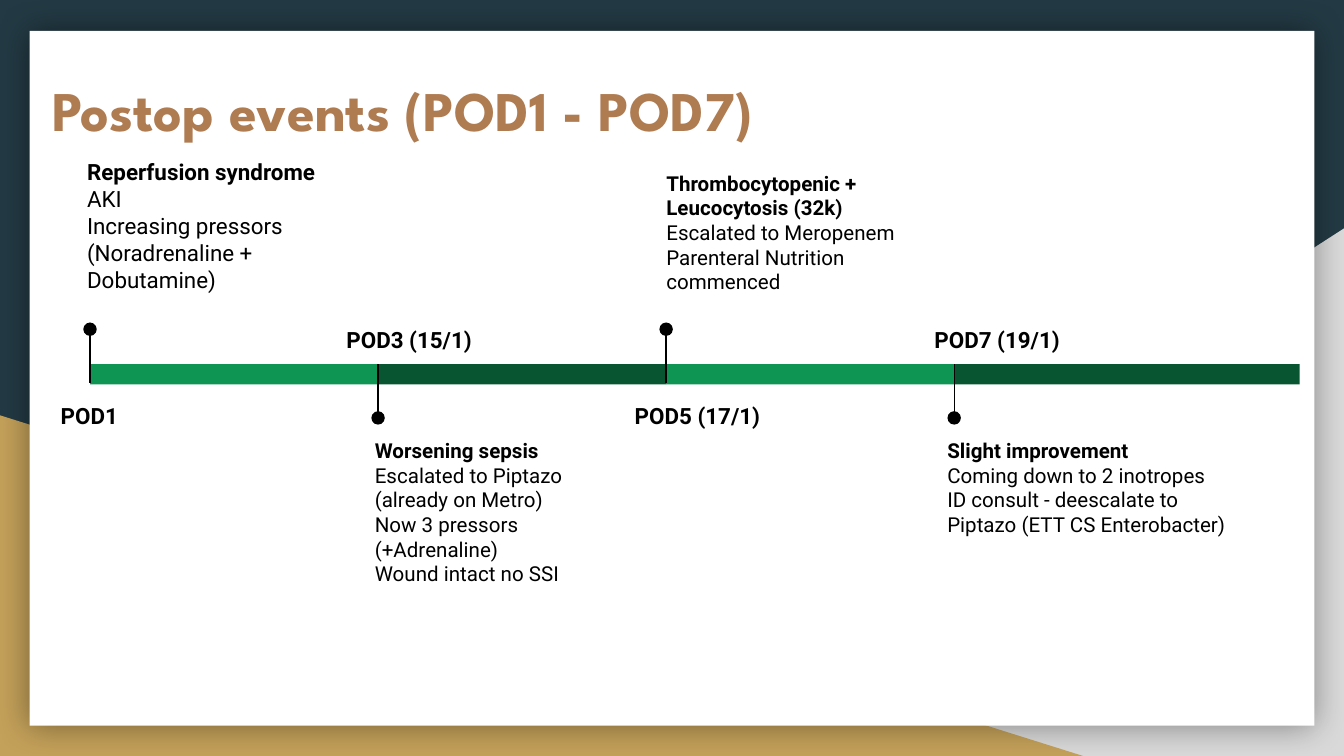
from copy import deepcopy

from lxml import etree
from pptx import Presentation
from pptx.dml.color import RGBColor
from pptx.enum.shapes import MSO_CONNECTOR, MSO_SHAPE
from pptx.enum.text import MSO_ANCHOR, PP_ALIGN
from pptx.oxml.ns import qn
from pptx.util import Inches, Pt

RECT, OVAL, WEDGE = MSO_SHAPE.RECTANGLE, MSO_SHAPE.OVAL, MSO_SHAPE.RIGHT_TRIANGLE
LINE = MSO_CONNECTOR.STRAIGHT
TOP = MSO_ANCHOR.TOP
LEFT, CENTER = PP_ALIGN.LEFT, PP_ALIGN.CENTER

NAVY = RGBColor(0x23, 0x3A, 0x44)
GREY = RGBColor(0xD9, 0xD9, 0xD9)
GOLD = RGBColor(0xC4, 0xA1, 0x5A)
WHITE = RGBColor(0xFF, 0xFF, 0xFF)
BLACK = RGBColor(0, 0, 0)
BROWN = RGBColor(0xAF, 0x7B, 0x51)
GREEN = RGBColor(0x0E, 0x94, 0x53)
DARK = RGBColor(0x08, 0x56, 0x31)

WIDE = 10
HIGH = WIDE * 9 / 16
START, LAST, END = 0.67, 7.1, 9.67
BAR_TOP, BAR_H = 2.71, 0.15
DOT = 0.1

# label, label box (left, width), note box (left, top, width), note size, head, note
EVENTS = [
    ("POD1", (0.19, 0.95), (0.55, 1.08, 2.14), 12, "Reperfusion syndrome",
     "AKI\nIncreasing pressors (Noradrenaline + Dobutamine)"),
    ("POD3 (15/1)", (2.41, 1.27), (2.69, 3.16, 2.08), 11, "Worsening sepsis",
     "Escalated to Piptazo (already on Metro)\n"
     "Now 3 pressors (+Adrenaline)\nWound intact no SSI"),
    ("POD5 (17/1)", (4.6, 1.18), (4.86, 1.17, 2.14), 11,
     "Thrombocytopenic + Leucocytosis (32k)",
     "Escalated to Meropenem\nParenteral Nutrition commenced"),
    ("POD7 (19/1)", (6.69, 1.46), (6.95, 3.16, 2.46), 11, "Slight improvement",
     "Coming down to 2 inotropes\n"
     "ID consult - deescalate to Piptazo (ETT CS Enterobacter)"),
]


class Deck:
    def __init__(self):
        self.prs = Presentation()
        self.prs.slide_width, self.prs.slide_height = Inches(WIDE), Inches(HIGH)
        self.slide = self.prs.slides.add_slide(self.prs.slide_layouts[6])
        fill = self.slide.background.fill
        fill.solid()
        fill.fore_color.rgb = NAVY

    def shape(self, kind, x, y, w, h, color):
        item = self.slide.shapes.add_shape(kind, *map(Inches, (x, y, w, h)))
        item.shadow.inherit = False
        item.fill.solid()
        item.fill.fore_color.rgb = color
        item.line.fill.background()
        return item

    def glow(self, item, blur, alpha):
        """Give the shape an even dark shadow on all sides."""
        effects = item._element.spPr.find(qn("a:effectLst"))
        shade = etree.SubElement(effects, qn("a:outerShdw"),
                                 blurRad=str(Pt(blur)), dist="0", algn="ctr", rotWithShape="0")
        color = etree.SubElement(shade, qn("a:srgbClr"), val=str(BLACK))
        etree.SubElement(color, qn("a:alpha"), val=str(alpha * 1000))

    def line(self, x, top, end):
        item = self.slide.shapes.add_connector(LINE, *map(Inches, (x, top, x, end)))
        item.line.color.rgb = BLACK
        item.line.width = Pt(0.75)
        etree.SubElement(item._element.spPr, qn("a:effectLst"))

    def text(self, parts, x, y, w, h, size=12, font="Roboto", color=BLACK,
             align=LEFT, space=None, after=None):
        """Write one paragraph per part, the first in bold; newlines break lines."""
        frame = self.slide.shapes.add_textbox(*map(Inches, (x, y, w, h))).text_frame
        frame.word_wrap = True
        frame.vertical_anchor = TOP
        frame.margin_left = frame.margin_right = Inches(0.1)
        frame.margin_top = frame.margin_bottom = Inches(0.1)
        for i, part in enumerate(parts):
            para = frame.add_paragraph() if i else frame.paragraphs[0]
            para.alignment, para.line_spacing = align, space
            if part == parts[-1]:
                para.space_after = after
            para.text = part.replace("\n", "\v")
            for run in para.runs:
                run.font.size, run.font.name = Pt(size), font
                run.font.bold = i == 0
                run.font.color.rgb = color
            for gap in para._p.findall(qn("a:br")):
                gap.append(deepcopy(para.runs[0]._r.rPr))

    def event(self, i, label, place, note, size, head, body):
        """Draw one stretch of the bar; notes go above and below in turn."""
        above = i % 2 == 0
        step = (LAST - START) / (len(EVENTS) - 1)
        x = START + i * step
        width = END - LAST if i == len(EVENTS) - 1 else step
        self.shape(RECT, x, BAR_TOP, width, BAR_H, GREEN if above else DARK)
        top, end, dot = (2.46, 2.85, 2.4) if above else (BAR_TOP, 3.1, 3.06)
        self.line(x, top, end)
        self.shape(OVAL, x - DOT / 2, dot, DOT, DOT, BLACK)
        left, wide = place
        self.text([label], left, 2.86 if above else 2.3, wide, 0.41,
                  align=CENTER, space=1.15, after=Pt(16))
        self.text([head, body], *note, 1.03, size=size, after=Pt(16))


def main():
    deck = Deck()
    wedge = deck.shape(WEDGE, 3.92, 1.7, 6.08, HIGH - 1.7, GREY)
    wedge._element.spPr.find(qn("a:xfrm")).set("flipH", "1")
    deck.shape(WEDGE, 0, 3.09, 8.06, HIGH - 3.09, GOLD)
    card = deck.shape(RECT, 0.22, 0.23, 9.56, 5.17, WHITE)
    deck.glow(card, 18, 40)
    deck.text(["Postop events (POD1 - POD7)"], 0.29, 0.46, 8.21, 1.04,
              size=30, font="League Spartan", color=BROWN)
    for i, event in enumerate(EVENTS):
        deck.event(i, *event)
    deck.prs.save("out.pptx")


if __name__ == "__main__":
    main()
